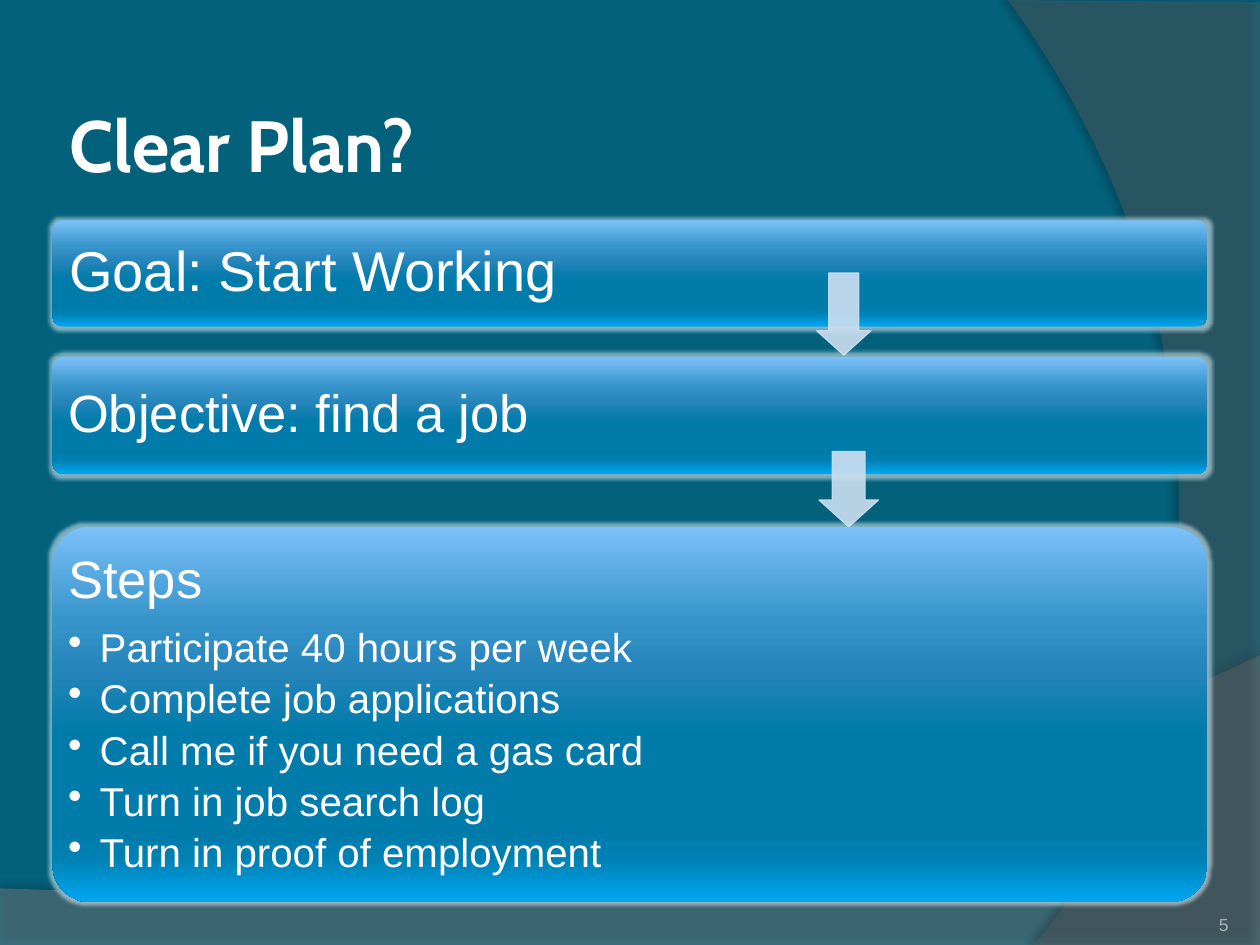
from lxml import etree
from pptx import Presentation
from pptx.dml.color import RGBColor
from pptx.enum.shapes import MSO_SHAPE
from pptx.enum.text import MSO_ANCHOR, PP_ALIGN
from pptx.oxml.ns import qn
from pptx.util import Pt

ROUNDED = MSO_SHAPE.ROUNDED_RECTANGLE
DOWN_ARROW = MSO_SHAPE.DOWN_ARROW
MIDDLE, BOTTOM = MSO_ANCHOR.MIDDLE, MSO_ANCHOR.BOTTOM
LEFT, RIGHT = PP_ALIGN.LEFT, PP_ALIGN.RIGHT

WIDTH, HEIGHT = 720, 540
COLOURS = {
    "background": "04617B",
    "lower_wave": "7F7F7F",
    "side_wave": "5E5E5E",
    "shadow": "000000",
    "glow": "D0E6F0",
    "text": "FFFFFF",
    "arrow": "CCDFF1",
    "number": "A2B5B8",
}
CARD_GRADIENT = [(0, "7BC0F9"), (25, "3694CA"), (38, "2685BA"), (55, "007BAA"),
                 (80, "007AA9"), (88, "0080B2"), (100, "00A7F1")]
STEPS = [
    "Participate 40 hours per week",
    "Complete job applications",
    "Call me if you need a gas card",
    "Turn in job search log",
    "Turn in proof of employment",
]


def colour(name):
    return RGBColor.from_string(COLOURS[name])


def add_xml(parent, tag, **attributes):
    return etree.SubElement(parent, qn(tag), {k: str(v) for k, v in attributes.items()})


def set_alpha(shape, percent):
    """Make every colour of the shape's fill and line partly transparent."""
    for element in shape._element.spPr.iter(qn("a:srgbClr")):
        add_xml(element, "a:alpha", val=percent * 1000)


def add_effect(shape, tag, name, percent, **attributes):
    shape.shadow.inherit = False
    effects = shape._element.spPr.find(qn("a:effectLst"))
    effect = add_xml(effects, tag, **attributes)
    tint = add_xml(effect, "a:srgbClr", val=COLOURS[name])
    add_xml(tint, "a:alpha", val=percent * 1000)


def curve(*controls, steps=40):
    """Points along a cubic Bezier curve, without its start."""
    points = []
    for step in range(1, steps + 1):
        t = step / steps
        weights = ((1 - t) ** 3, 3 * t * (1 - t) ** 2, 3 * t * t * (1 - t), t ** 3)
        points.append(tuple(sum(w * c[axis] for w, c in zip(weights, controls))
                            for axis in (0, 1)))
    return points


def add_wave(slide, points, name, alpha, shadow_alpha, distance, direction):
    points = [(Pt(x), Pt(y)) for x, y in points]
    builder = slide.shapes.build_freeform(*points[0], scale=1.0)
    builder.add_line_segments(points[1:], close=True)
    wave = builder.convert_to_shape()
    wave.fill.solid()
    wave.fill.fore_color.rgb = colour(name)
    wave.line.fill.background()
    set_alpha(wave, alpha)
    add_effect(wave, "a:outerShdw", "shadow", shadow_alpha, blurRad=Pt(4),
               dist=Pt(distance), dir=direction * 60000, algn="ctr", rotWithShape=0)


def add_background(slide):
    slide.background.fill.solid()
    slide.background.fill.fore_color.rgb = colour("background")
    lower = [(0, 507.6), (0, HEIGHT), (WIDTH, HEIGHT), (WIDTH, 374.4)]
    lower += curve(lower[-1], (402.5, 525), (281.5, 517.7), lower[0])
    add_wave(slide, lower, "lower_wave", 45, 35, 3.5, 270)
    side = [(WIDTH, 1.4), (WIDTH, HEIGHT), (591, HEIGHT)]
    side += curve(side[-1], (673, 445.7), (733, 216), (576, 0))
    add_wave(slide, side, "side_wave", 40, 45, 4, 180)


def add_text_box(slide, box, inset, anchor=MIDDLE):
    frame = slide.shapes.add_textbox(*map(Pt, box)).text_frame
    frame.word_wrap = True
    frame.vertical_anchor = anchor
    frame.margin_left = frame.margin_right = Pt(inset)
    frame.margin_top = frame.margin_bottom = Pt(inset)
    return frame


def add_run(paragraph, text, size, name="text", font="Arial", bold=False):
    run = paragraph.add_run()
    run.text = text
    run.font.size = Pt(size)
    run.font.name = font
    run.font.bold = bold
    run.font.color.rgb = colour(name)


def add_bullet(paragraph, indent):
    properties = paragraph._p.get_or_add_pPr()
    properties.set("marL", str(Pt(indent)))
    properties.set("indent", str(Pt(-indent)))
    add_xml(properties, "a:buChar", char="•")


def add_card(slide, box, heading, size, text_width, steps=()):
    card = slide.shapes.add_shape(ROUNDED, *map(Pt, box))
    card.adjustments[0] = 0.1
    card.fill.gradient()
    card.fill.gradient_angle = 270
    stops = card._element.spPr.find(qn("a:gradFill")).find(qn("a:gsLst"))
    stops.clear()
    for position, value in CARD_GRADIENT:
        stop = add_xml(stops, "a:gs", pos=position * 1000)
        add_xml(stop, "a:srgbClr", val=value)
    card.line.fill.background()
    add_effect(card, "a:glow", "glow", 60, rad=Pt(4))

    left, top, _, height = box
    frame = add_text_box(slide, (left, top, text_width, height), size * 0.3)
    paragraph = frame.paragraphs[0]
    paragraph.line_spacing = 0.9
    paragraph.space_after = Pt(size * 0.35)
    add_run(paragraph, heading, size)
    for step in steps:
        paragraph = frame.add_paragraph()
        paragraph.level = 1
        paragraph.line_spacing = 0.9
        paragraph.space_after = Pt(4.4)
        add_bullet(paragraph, 18)
        add_run(paragraph, step, 23)


def add_arrow(slide, box):
    arrow = slide.shapes.add_shape(DOWN_ARROW, *map(Pt, box))
    arrow.adjustments[0] = 0.55
    arrow.adjustments[1] = 0.45
    arrow.fill.solid()
    arrow.fill.fore_color.rgb = colour("arrow")
    arrow.line.color.rgb = colour("arrow")
    arrow.line.width = Pt(0.75)
    arrow.shadow.inherit = False
    set_alpha(arrow, 90)


def add_label(slide, box, text, size, inset, anchor, alignment, **style):
    paragraph = add_text_box(slide, box, inset, anchor).paragraphs[0]
    paragraph.alignment = alignment
    add_run(paragraph, text, size, **style)


def add_plan(slide, left, width):
    add_card(slide, (left, 126, width, 60.5), "Goal: Start Working", 32, 515.5)
    add_card(slide, (left, 204, width, 67), "Objective: find a job", 30, 510)
    add_card(slide, (left, 301, width, 214.5), "Steps", 30, 510, STEPS)
    add_arrow(slide, (left + 436.7, 156, 31, 47))
    add_arrow(slide, (left + 438, 258, 34, 43))


def main():
    presentation = Presentation()
    presentation.slide_width, presentation.slide_height = Pt(WIDTH), Pt(HEIGHT)
    slide = presentation.slides.add_slide(presentation.slide_layouts[6])
    add_background(slide)
    add_label(slide, (36, 54, 654, 56), "Clear Plan?", 41.4, 3.6, MIDDLE, LEFT,
              font="Cabin", bold=True)
    add_plan(slide, 30, 660)
    add_label(slide, (642, 505.5, 60, 28.8), "5", 10, 0, BOTTOM, RIGHT, name="number")
    presentation.save("out.pptx")


if __name__ == "__main__":
    main()
